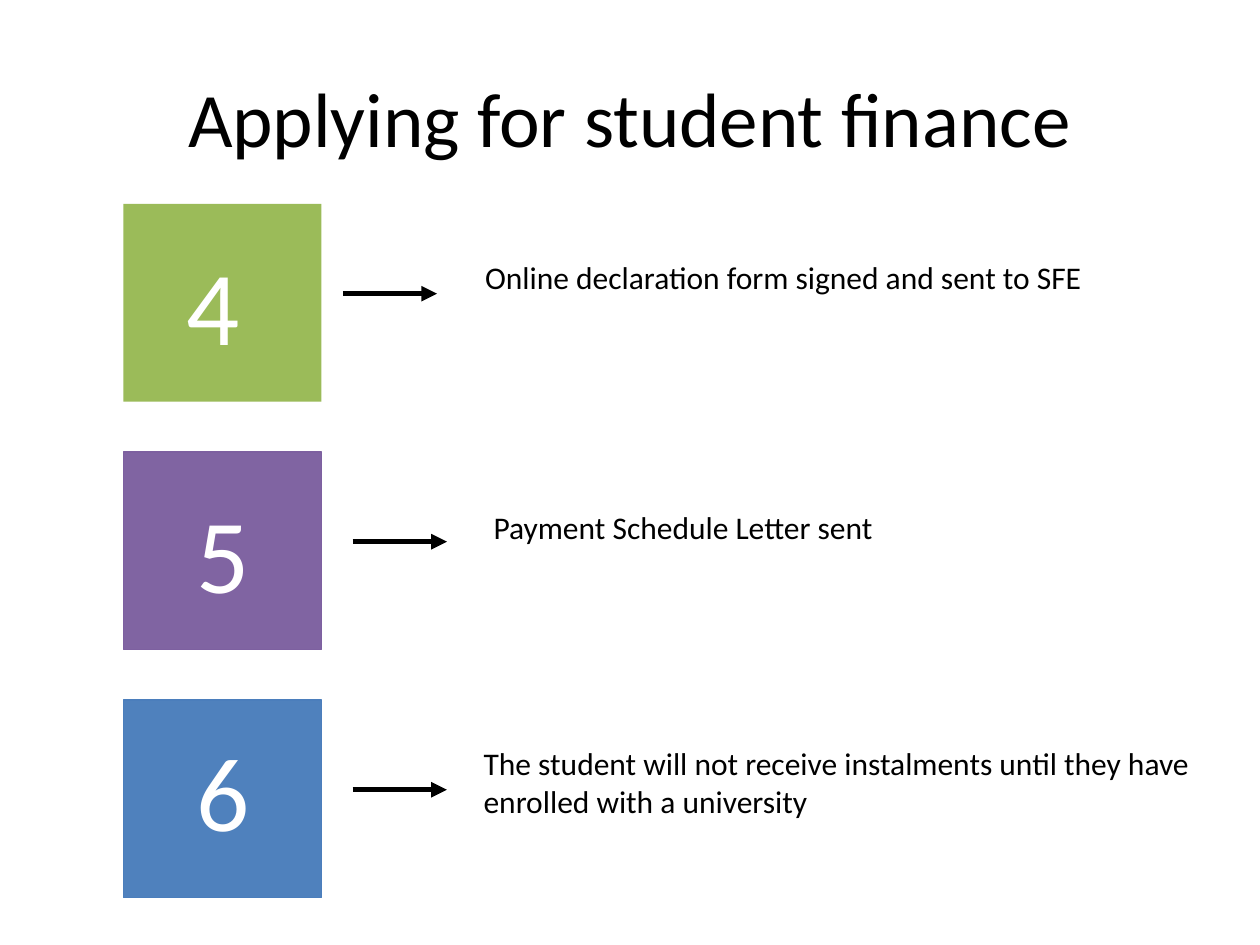
from lxml import etree
from pptx import Presentation
from pptx.dml.color import RGBColor
from pptx.enum.shapes import MSO_CONNECTOR, MSO_SHAPE
from pptx.enum.text import MSO_ANCHOR, PP_ALIGN
from pptx.oxml.ns import qn
from pptx.util import Cm, Pt

RECTANGLE = MSO_SHAPE.RECTANGLE
STRAIGHT = MSO_CONNECTOR.STRAIGHT
MIDDLE = MSO_ANCHOR.MIDDLE
CENTER = PP_ALIGN.CENTER

COLORS = {
    "black": "000000",
    "white": "FFFFFF",
    "green": "9BBB59",
    "purple": "8064A2",
    "purple line": "7D60A0",
    "blue": "4F81BD",
    "blue line": "4B7EBC",
}
FONT = "Calibri"
SQUARE_LEFT, SQUARE_TOP, SQUARE_SIZE = 2.49, 4.11, 3.99
STEP_PITCH = 5.0
ARROW_TOP, ARROW_LENGTH = 5.92, 1.9


def color(name):
    return RGBColor.from_string(COLORS[name])


def add_text(slide, box, text, size, color_name):
    shape = slide.shapes.add_textbox(*(Cm(length) for length in box))
    shape.text_frame.word_wrap = True
    paragraph = shape.text_frame.paragraphs[0]
    paragraph.text = text
    paragraph.font.name = FONT
    paragraph.font.size = Pt(size)
    paragraph.font.color.rgb = color(color_name)


presentation = Presentation()
presentation.slide_width = Cm(25.4)
presentation.slide_height = Cm(19.05)
slide = presentation.slides.add_slide(presentation.slide_layouts[5])

# Title
title = slide.shapes.title
title.left, title.top, title.width, title.height = Cm(1.27), Cm(0.76), Cm(22.86), Cm(3.18)
title.text_frame.vertical_anchor = MIDDLE
paragraph = title.text_frame.paragraphs[0]
paragraph.text = "Applying for student finance"
paragraph.alignment = CENTER
paragraph.font.name = FONT
paragraph.font.size = Pt(44)
paragraph.font.color.rgb = color("black")

# Steps: number, fill, line, number position, arrow left, text box, text
steps = [
    ("4", "green", None, (3.51, 4.72), 6.91, (9.53, 5.08, 12.78, 3.86),
     "Online declaration form signed and sent to SFE"),
    ("5", "purple", "purple line", (3.71, 9.73), 7.11, (9.7, 10.11, 12.78, 2.82),
     "Payment Schedule Letter sent"),
    ("6", "blue", "blue line", (3.71, 14.53), 7.11, (9.5, 14.88, 15.9, 3.86),
     "The student will not receive instalments until they have enrolled with a university"),
]
for index, (number, fill, line, number_position, arrow_left, text_box, text) in enumerate(steps):
    offset = index * STEP_PITCH

    # Coloured square
    square = slide.shapes.add_shape(
        RECTANGLE, Cm(SQUARE_LEFT), Cm(SQUARE_TOP + offset), Cm(SQUARE_SIZE), Cm(SQUARE_SIZE))
    square.shadow.inherit = False
    square.fill.solid()
    square.fill.fore_color.rgb = color(fill)
    if line:
        square.line.color.rgb = color(line)
        square.line.width = Pt(0.75)
    else:
        square.line.fill.background()

    # Number and description
    add_text(slide, (*number_position, 1.4, 2.82), number, 60, "white")
    add_text(slide, text_box, text, 18, "black")

    # Arrow
    arrow_y = Cm(ARROW_TOP + offset)
    arrow = slide.shapes.add_connector(
        STRAIGHT, Cm(arrow_left), arrow_y, Cm(arrow_left + ARROW_LENGTH), arrow_y)
    arrow.line.color.rgb = color("black")
    arrow.line.width = Pt(3)
    etree.SubElement(arrow.line._get_or_add_ln(), qn("a:tailEnd"), type="triangle")
    etree.SubElement(arrow._element.spPr, qn("a:effectLst"))

presentation.save("out.pptx")
